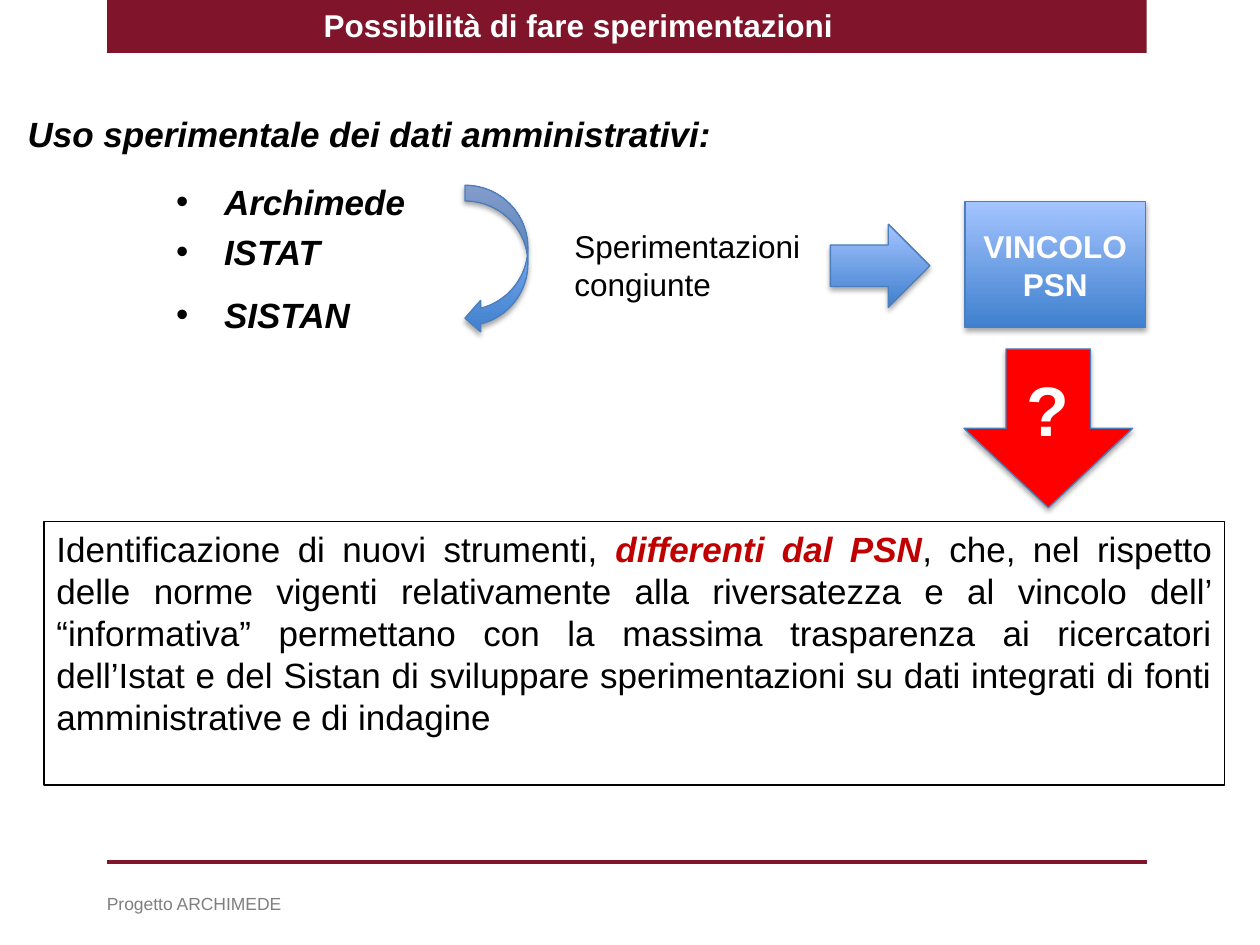
from lxml.etree import SubElement
from pptx import Presentation
from pptx.dml.color import RGBColor
from pptx.enum.shapes import MSO_CONNECTOR, MSO_SHAPE
from pptx.enum.text import MSO_ANCHOR, PP_ALIGN
from pptx.oxml.ns import qn
from pptx.util import Inches, Pt

COLORS = {
    "maroon": "7F142A", "black": "000000", "white": "FFFFFF", "gray": "7F7F7F",
    "red": "FF0000", "dark_red": "C00000", "outline": "4B7EBC",
    "blue_bottom": "3F80CE", "blue_top": "A4C4FF",
}
STRONG = {"bold": True, "italic": True}


def rgb(name):
    """Return the named colour."""
    return RGBColor.from_string(COLORS[name])


def add_run(paragraph, text, color="black", **font_values):
    """Add a run in Arial with the given font values."""
    run = paragraph.add_run()
    run.text = text
    run.font.color.rgb = rgb(color)
    for name, value in {"name": "Arial", **font_values}.items():
        setattr(run.font, name, value)


def write_lines(shape, lines, color="black", align=PP_ALIGN.LEFT, wrap=True,
                anchor=MSO_ANCHOR.TOP, **font_values):
    """Write one paragraph for each line."""
    frame = shape.text_frame
    frame.word_wrap = wrap
    frame.vertical_anchor = anchor
    for index, line in enumerate(lines):
        paragraph = frame.add_paragraph() if index else frame.paragraphs[0]
        paragraph.alignment = align
        add_run(paragraph, line, color, **font_values)


def add_label(slide, left, top, width, height, lines, **format_values):
    """Add a text box with the given lines."""
    shape = slide.shapes.add_textbox(
        Inches(left), Inches(top), Inches(width), Inches(height))
    write_lines(shape, lines, **format_values)
    return shape


def add_bullet(paragraph, indent):
    """Give a paragraph a round bullet with a hanging indent."""
    properties = paragraph._p.get_or_add_pPr()
    properties.set("marL", str(Inches(indent)))
    properties.set("indent", str(-Inches(indent)))
    SubElement(properties, qn("a:buFont"), typeface="Arial")
    SubElement(properties, qn("a:buChar"), char="•")


def add_shadow(shape):
    """Add a soft shadow below a shape."""
    shape.shadow.inherit = False
    effects = shape._element.spPr.find(qn("a:effectLst"))
    shadow = SubElement(effects, qn("a:outerShdw"), blurRad=str(Pt(3.1)),
                        dist=str(Pt(1.8)), dir="5400000", rotWithShape="0")
    color = SubElement(shadow, qn("a:srgbClr"), val=COLORS["black"])
    SubElement(color, qn("a:alpha"), val="35000")


def add_flow_shape(slide, kind, left, top, width, height, color=None):
    """Add a shadowed flow shape, blue gradient unless a colour is given."""
    shape = slide.shapes.add_shape(
        kind, Inches(left), Inches(top), Inches(width), Inches(height))
    if color:
        shape.fill.solid()
        shape.fill.fore_color.rgb = rgb(color)
    else:
        shape.fill.gradient()
        shape.fill.gradient_angle = 90
        for stop, name in zip(shape.fill.gradient_stops, ("blue_bottom", "blue_top")):
            stop.color.rgb = rgb(name)
    shape.line.color.rgb = rgb("outline")
    shape.line.width = Pt(0.75)
    add_shadow(shape)
    return shape


def add_header(slide, left, top, width, height):
    """Add the title band."""
    band = slide.shapes.add_shape(
        MSO_SHAPE.RECTANGLE, Inches(left), Inches(top), Inches(width), Inches(height))
    band.shadow.inherit = False
    band.fill.solid()
    band.fill.fore_color.rgb = rgb("maroon")
    band.line.fill.background()
    add_label(slide, left + 1.62, top, 4.35, 0.4,
              ["Possibilità di fare sperimentazioni"],
              color="white", wrap=False, size=Pt(18), bold=True)


def add_footer(slide, left, top, width):
    """Add the footer rule and project name."""
    rule = slide.shapes.add_connector(
        MSO_CONNECTOR.STRAIGHT, Inches(left), Inches(top),
        Inches(left + width), Inches(top))
    rule.line.color.rgb = rgb("maroon")
    rule.line.width = Pt(2)
    SubElement(rule._element.spPr, qn("a:effectLst"))
    add_label(slide, left - 0.1, top + 0.2, 5.13, 0.27, ["Progetto ARCHIMEDE"],
              color="gray", size=Pt(10))


def add_sources(slide, left, top, width):
    """Add the heading and the bulleted data sources."""
    add_label(slide, left, top, width, 0.55,
              ["Uso sperimentale dei dati amministrativi:"], size=Pt(20), **STRONG)
    for name, offset in (("Archimede", 0.54), ("ISTAT", 0.94), ("SISTAN", 1.44)):
        label = add_label(slide, left + 1.18, top + offset, 2.3, 0.48, [])
        paragraph = label.text_frame.paragraphs[0]
        add_bullet(paragraph, 0.38)
        add_run(paragraph, name, size=Pt(20), **STRONG)


def add_flow(slide, left, top):
    """Add the flow from joint experiments to the constraint and the question."""
    add_flow_shape(slide, MSO_SHAPE.CURVED_LEFT_ARROW, left, top, 0.5, 1.18)
    add_label(slide, left + 0.77, top + 0.28, 2.08, 0.71,
              ["Sperimentazioni", "congiunte"], wrap=False, size=Pt(18))
    add_flow_shape(slide, MSO_SHAPE.RIGHT_ARROW, left + 2.9, top + 0.31, 0.79, 0.66)
    constraint = add_flow_shape(
        slide, MSO_SHAPE.RECTANGLE, left + 3.97, top + 0.13, 1.43, 1)
    question = add_flow_shape(
        slide, MSO_SHAPE.DOWN_ARROW, left + 3.96, top + 1.3, 1.34, 1.26, "red")
    for shape, lines, size in ((constraint, ["VINCOLO", "PSN"], 18),
                               (question, ["?"], 40)):
        write_lines(shape, lines, color="white", align=PP_ALIGN.CENTER,
                    anchor=MSO_ANCHOR.MIDDLE, size=Pt(size), bold=True)


def add_conclusion(slide, left, top, width, height):
    """Add the framed conclusion."""
    box = slide.shapes.add_shape(
        MSO_SHAPE.RECTANGLE, Inches(left), Inches(top), Inches(width), Inches(height))
    box.shadow.inherit = False
    box.fill.background()
    box.line.color.rgb = rgb("black")
    box.line.width = Pt(0.75)
    write_lines(box, ["Identificazione di nuovi strumenti, "],
                align=PP_ALIGN.JUSTIFY, size=Pt(20))
    paragraph = box.text_frame.paragraphs[0]
    add_run(paragraph, "differenti dal PSN", "dark_red", size=Pt(20), **STRONG)
    add_run(paragraph, ", che, nel rispetto delle norme vigenti relativamente alla "
            "riversatezza e al vincolo dell’ “informativa” permettano con la massima "
            "trasparenza ai ricercatori dell’Istat e del Sistan di sviluppare "
            "sperimentazioni su dati integrati di fonti amministrative e di indagine",
            size=Pt(20))


def main():
    """Build and save the slide."""
    presentation = Presentation()
    presentation.slide_width = Inches(10)
    presentation.slide_height = Inches(7.5)
    slide = presentation.slides.add_slide(presentation.slide_layouts[6])
    add_header(slide, 0.85, 0, 8.25, 0.42)
    add_footer(slide, 0.85, 6.84, 8.25)
    add_sources(slide, 0.12, 0.84, 9.45)
    add_flow(slide, 3.69, 1.47)
    add_conclusion(slide, 0.35, 4.14, 9.37, 2.09)
    presentation.save("out.pptx")


if __name__ == "__main__":
    main()
